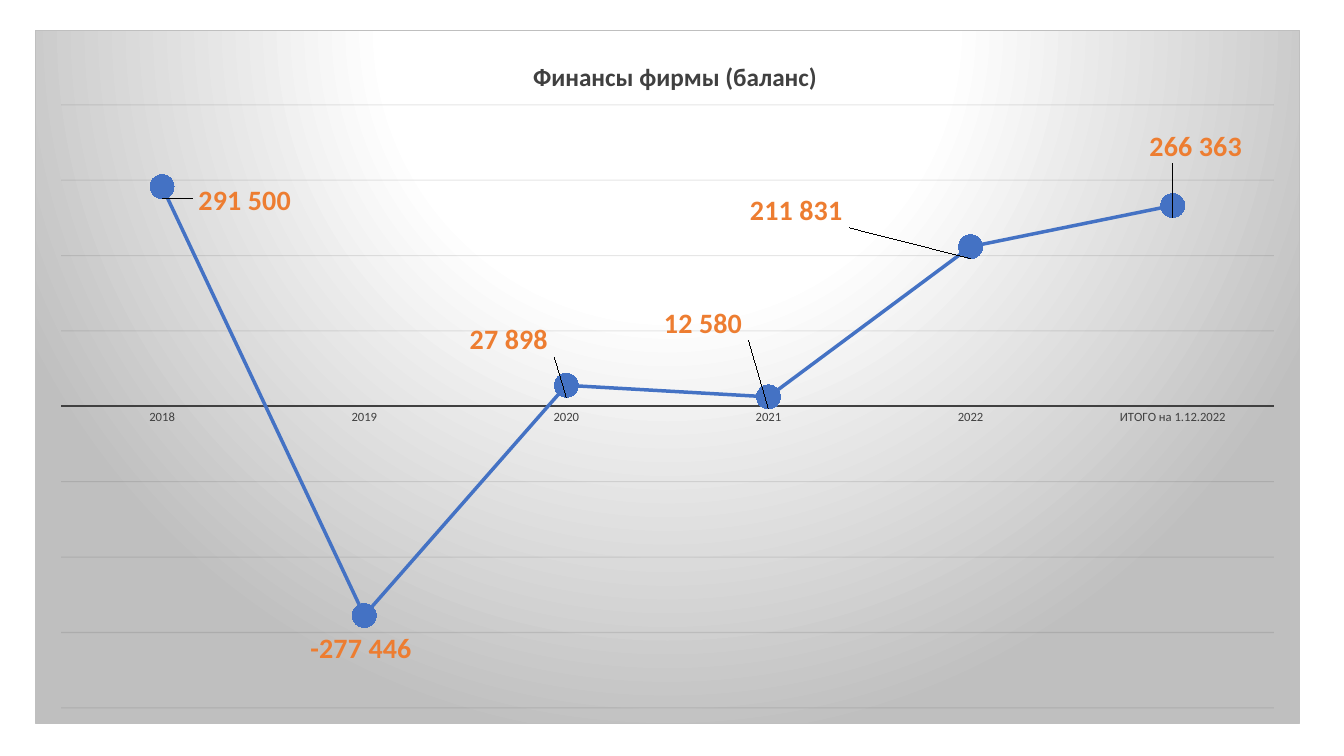
from lxml import etree
from pptx import Presentation
from pptx import util as u
from pptx.chart.data import CategoryChartData
from pptx.dml.color import RGBColor
from pptx.enum import chart as ch
from pptx.oxml import parse_xml
from pptx.oxml.ns import nsdecls, qn

SLIDE_W, SLIDE_H = 13.33, 7.5
FONT = "Calibri"
BLUE, ORANGE, DARK, GREY = "4472C4", "ED7D31", "404040", "BFBFBF"
NUMBER_FORMAT = r'_-* #\ ##0_-;\-* #\ ##0_-;_-* "-"??_-;_-'

YEARS = ["2018", "2019", "2020", "2021", "2022", "ИТОГО на 1.12.2022"]
BALANCE = [291500, -277446, 27898, 12580, 211831, 266363]
# Label shifts in inches from the place below each marker
LABEL_SHIFTS = {0: (0.82, -0.19), 2: (-0.57, -0.78), 3: (-0.65, -1.06),
                4: (-1.73, -0.69), 5: (0.23, -0.92)}


def color(hex_value):
    return RGBColor.from_string(hex_value)


def style_font(font, size, hex_value, bold=False):
    font.name, font.size, font.bold = FONT, u.Pt(size), bold
    font.color.rgb = color(hex_value)


def style_line(line, hex_value, width):
    line.color.rgb = color(hex_value)
    line.width = u.Pt(width)


def layout(x, y, w=None, h=None, inner=False, edge=True):
    """Manual layout in shares of the chart's size."""
    parts = ['<c:layoutTarget val="inner"/>'] if inner else []
    if edge:
        parts += ['<c:xMode val="edge"/>', '<c:yMode val="edge"/>']
    parts += [f'<c:{name} val="{value:.4f}"/>'
              for name, value in zip("xywh", (x, y, w, h)) if value is not None]
    return parse_xml(f'<c:layout {nsdecls("c")}><c:manualLayout>'
                     f'{"".join(parts)}</c:manualLayout></c:layout>')


def set_layout(parent, new, after=None):
    for old in parent.findall(qn("c:layout")):
        parent.remove(old)
    if after is None:
        parent.insert(0, new)
    else:
        parent.find(qn(after)).addnext(new)


def add_background(chart):
    """Radial gradient and thin border of the chart area."""
    stops = "".join(f'<a:gs pos="{pos}000"><a:srgbClr val="{c}"/></a:gs>'
                    for pos, c in ((0, "FFFFFF"), (39, "FFFFFF"), (100, GREY)))
    sp_pr = parse_xml(
        f'<c:spPr {nsdecls("c", "a")}><a:gradFill><a:gsLst>{stops}</a:gsLst>'
        '<a:path path="circle"><a:fillToRect l="50000" t="-80000" r="50000" b="180000"/>'
        f'</a:path></a:gradFill><a:ln w="9525"><a:solidFill><a:srgbClr val="{GREY}"/>'
        '</a:solidFill></a:ln></c:spPr>')
    space = chart.element
    space.find(qn("c:chart")).addnext(sp_pr)
    corners = parse_xml(f'<c:roundedCorners {nsdecls("c")} val="0"/>')
    space.find(qn("c:date1904")).addnext(corners)


def add_title(chart):
    tf = chart.chart_title.text_frame
    r = tf.paragraphs[0].add_run()
    r.text = "Финансы фирмы (баланс)"
    style_font(r.font, 18, DARK, True)
    chart_xml = chart.element.find(qn("c:chart"))
    set_layout(chart_xml.find(qn("c:title")), layout(0.39, 0.035), "c:tx")


def format_axes(chart):
    years = chart.category_axis
    years.major_tick_mark = ch.XL_TICK_MARK.NONE
    years.has_major_gridlines = False
    style_font(years.tick_labels.font, 9, DARK)
    style_line(years.format.line, DARK, 1.5)

    values = chart.value_axis
    values.minimum_scale, values.maximum_scale = -400000, 400000
    values.major_unit = 100000
    values.tick_labels.number_format = NUMBER_FORMAT
    values.tick_labels.number_format_is_linked = False
    style_line(values.major_gridlines.format.line, "0D0D0D", 0.75)
    for gridlines in chart.element.iter(qn("c:majorGridlines")):
        for clr in gridlines.iter(qn("a:srgbClr")):
            etree.SubElement(clr, qn("a:alpha")).set("val", "10000")
    values.visible = False


def format_series(chart, w, h):
    series = chart.plots[0].series[0]
    series.smooth = False
    style_line(series.format.line, BLUE, 2.5)
    marker = series.marker
    marker.style, marker.size = ch.XL_MARKER_STYLE.CIRCLE, 17
    marker.format.fill.solid()
    marker.format.fill.fore_color.rgb = color(BLUE)
    style_line(marker.format.line, BLUE, 0.75)

    # Value labels, most of them moved off their markers
    labels = series.data_labels
    labels.show_value = True
    labels.number_format = NUMBER_FORMAT
    labels.number_format_is_linked = False
    labels.position = ch.XL_LABEL_POSITION.BELOW
    style_font(labels.font, 20, ORANGE, True)
    for i in LABEL_SHIFTS:
        label = series.points[i].data_label
        label.position = ch.XL_LABEL_POSITION.BELOW
        style_font(label.font, 20, ORANGE, True)
    for d_lbl in chart.element.iter(qn("c:dLbl")):
        dx, dy = LABEL_SHIFTS[int(d_lbl.find(qn("c:idx")).get("val"))]
        set_layout(d_lbl, layout(dx / w, dy / h, edge=False), "c:idx")


def add_balance_chart(s, x, y, w, h):
    data = CategoryChartData()
    data.categories = YEARS
    data.add_series("Series 1", BALANCE)
    chart = s.shapes.add_chart(ch.XL_CHART_TYPE.LINE_MARKERS, u.Inches(x), u.Inches(y),
                               u.Inches(w), u.Inches(h), data).chart
    chart.has_legend = False
    style_font(chart.font, 10, "000000")
    add_background(chart)
    add_title(chart)
    format_axes(chart)
    chart.plots[0].vary_by_categories = False
    format_series(chart, w, h)
    plot_area = chart.element.find(qn("c:chart")).find(qn("c:plotArea"))
    set_layout(plot_area, layout(0.02, 0.107, 0.96, 0.871, inner=True))


def main():
    prs = Presentation()
    prs.slide_width, prs.slide_height = u.Inches(SLIDE_W), u.Inches(SLIDE_H)
    s = prs.slides.add_slide(prs.slide_layouts[6])
    add_balance_chart(s, 0.35, 0.3, 12.54, 6.88)
    prs.save("out.pptx")


if __name__ == "__main__":
    main()
